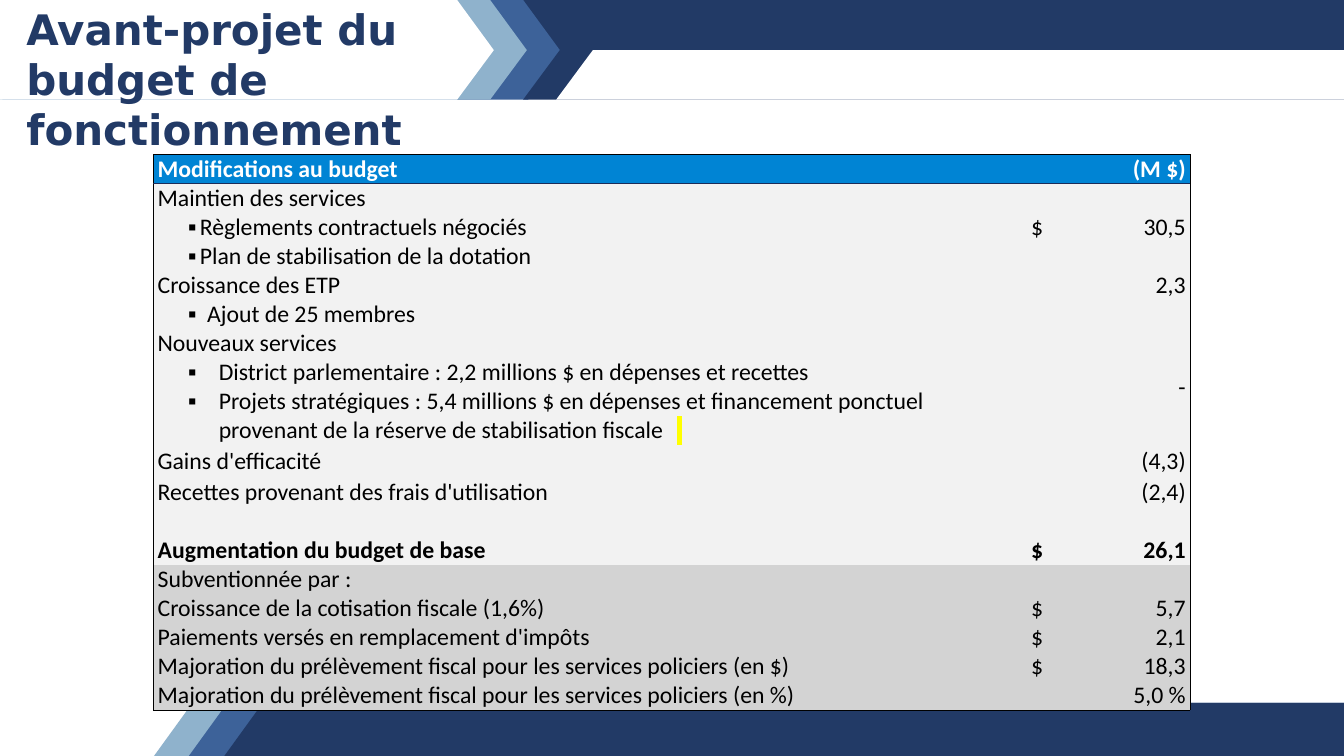
from dataclasses import dataclass
from typing import NamedTuple

import pptx
import pptx.dml.color
import pptx.enum.text
import pptx.oxml
import pptx.oxml.ns
import pptx.util
from pptx.util import Inches

ALIGN = pptx.enum.text.PP_ALIGN
ANCHOR = pptx.enum.text.MSO_ANCHOR
WIDTH, HEIGHT = 21.99, 12.37
LIGHT, MIDDLE, NAVY = "8FB2CC", "3D6299", "223A66"
BLACK, WHITE, HEADER_RULE = "000000", "FFFFFF", "1B2C59"
HEADER_FILL, CHANGE_FILL, FUNDING_FILL = "0084D4", "F2F2F2", "D3D3D3"
COLUMN_WIDTHS = (14.09, 0.74, 2.13)
LINE = 0.47
BAR, TIP, FOOTER = 0.82, 1.63, 11.5


class Band(NamedTuple):
    """A slanted strip: its top edge, its bottom edge and its colour."""
    top: float
    top_left: float
    top_right: float
    bottom: float
    bottom_left: float
    bottom_right: float
    color: str


BANDS = [
    Band(FOOTER, 3.15, WIDTH, HEIGHT, 2.52, WIDTH, LIGHT),
    Band(FOOTER, 3.72, WIDTH, HEIGHT, 3.09, WIDTH, MIDDLE),
    Band(FOOTER, 4.3, WIDTH, HEIGHT, 3.67, WIDTH, NAVY),
    Band(0, 5.22, WIDTH, BAR, 5.81, WIDTH, NAVY),
    Band(0, 0.04, 8.56, BAR, 0.04, 9.16, MIDDLE),
    Band(0, 0.04, 8.02, BAR, 0.04, 8.62, LIGHT),
    Band(0, 0, 7.48, BAR, 0, 8.08, WHITE),
    Band(BAR, 0.04, 9.23, TIP, 0.04, 8.64, MIDDLE),
    Band(BAR, 0, 8.62, TIP, 0, 8.02, LIGHT),
    Band(BAR, 0, 8.08, TIP, 0, 7.48, WHITE),
    Band(BAR, 9.16, WIDTH, TIP, 8.56, WIDTH, NAVY),
    Band(BAR, 9.7, WIDTH, TIP, 9.1, WIDTH, WHITE),
]


@dataclass
class BudgetRow:
    label: str = ""
    amount: str = ""
    dollar: str = ""
    bullets: tuple[str, ...] = ()
    indent: float = 0
    hanging: float = 0
    height: float = LINE
    fill: str = CHANGE_FILL
    color: str = BLACK
    bold: bool = False
    amount_anchor: ANCHOR = ANCHOR.MIDDLE
    amount_spacing: float = 1


ROWS = [
    BudgetRow("Modifications au budget", "(M $)", fill=HEADER_FILL, color=WHITE,
              bold=True, amount_anchor=ANCHOR.BOTTOM),
    BudgetRow("Maintien des services", "30,5", "$",
              ("Règlements contractuels négociés", "Plan de stabilisation de la dotation"),
              0.69, 0.19, height=1.4, amount_anchor=ANCHOR.TOP, amount_spacing=2),
    BudgetRow("Croissance des ETP", "2,3", "", ("Ajout de 25 membres",),
              0.81, 0.31, height=0.93, amount_anchor=ANCHOR.TOP),
    BudgetRow("Nouveaux services", "-", "",
              ("District parlementaire : 2,2 millions $ en dépenses et recettes",
               "Projets stratégiques : 5,4 millions $ en dépenses et financement ponctuel "
               "provenant de la réserve de stabilisation fiscale"),
              1, 0.5, height=1.9),
    BudgetRow("Gains d'efficacité", "(4,3)", height=0.53),
    BudgetRow("Recettes provenant des frais d'utilisation", "(2,4)"),
    BudgetRow(),
    BudgetRow("Augmentation du budget de base", "26,1", "$", bold=True),
    BudgetRow("Subventionnée par :", fill=FUNDING_FILL),
    BudgetRow("Croissance de la cotisation fiscale (1,6%)", "5,7", "$", fill=FUNDING_FILL),
    BudgetRow("Paiements versés en remplacement d'impôts", "2,1", "$", fill=FUNDING_FILL),
    BudgetRow("Majoration du prélèvement fiscal pour les services policiers (en $)",
              "18,3", "$", fill=FUNDING_FILL),
    BudgetRow("Majoration du prélèvement fiscal pour les services policiers (en %)",
              "5,0 %", fill=FUNDING_FILL),
]


def rgb(color: str) -> pptx.dml.color.RGBColor:
    return pptx.dml.color.RGBColor.from_string(color)


def xml(markup: str):
    """Parse one DrawingML element, adding the namespace to its tag."""
    tag, rest = markup.split(" ", 1)
    return pptx.oxml.parse_xml(f"{tag} {pptx.oxml.ns.nsdecls('a')} {rest}")


def draw_band(page, band: Band) -> None:
    builder = page.shapes.build_freeform(Inches(band.top_left), Inches(band.top))
    builder.add_line_segments([
        (Inches(band.top_right), Inches(band.top)),
        (Inches(band.bottom_right), Inches(band.bottom)),
        (Inches(band.bottom_left), Inches(band.bottom))])
    shape = builder.convert_to_shape()
    shape.shadow.inherit = False
    shape.fill.solid()
    shape.fill.fore_color.rgb = rgb(band.color)
    shape.line.fill.background()


def set_borders(cell, colors: dict[str, str]) -> None:
    """Draw the sides (L, R, T, B) that have a colour and clear the others."""
    properties = cell._tc.get_or_add_tcPr()
    for side in "LRTB":
        paint = "<a:noFill/>"
        if side in colors:
            paint = f'<a:solidFill><a:srgbClr val="{colors[side]}"/></a:solidFill>'
        properties.append(xml(f'<a:ln{side} w="12700">{paint}</a:ln{side}>'))


def add_bullet(para, indent: float, hanging: float) -> None:
    properties = para._p.get_or_add_pPr()
    properties.set("marL", str(Inches(indent)))
    properties.set("indent", str(-Inches(hanging)))
    properties.append(xml(f'<a:buClr ><a:srgbClr val="{BLACK}"/></a:buClr>'))
    properties.append(xml('<a:buFont typeface="Calibri"/>'))
    properties.append(xml('<a:buChar char="▪"/>'))


def set_font(para, name: str, size: float, color: str, bold: bool) -> None:
    para.font.name = name
    para.font.size = pptx.util.Pt(size)
    para.font.bold = bold
    para.font.color.rgb = rgb(color)


def fill_cell(cell, row: BudgetRow, column: int) -> None:
    cell.margin_left = cell.margin_right = Inches(0.07)
    cell.margin_top = cell.margin_bottom = 0
    cell.vertical_anchor = row.amount_anchor if column else ANCHOR.MIDDLE
    cell.fill.solid()
    cell.fill.fore_color.rgb = rgb(row.fill)
    lines = ((row.label, *row.bullets), (row.dollar,), (row.amount,))[column]
    cell.text_frame.text = "\n".join(lines)
    for index, para in enumerate(cell.text_frame.paragraphs):
        para.alignment = (ALIGN.LEFT, ALIGN.CENTER, ALIGN.RIGHT)[column]
        if column and row.amount_spacing != 1:
            para.line_spacing = float(row.amount_spacing)
        if index:
            add_bullet(para, row.indent, row.hanging)
        set_font(para, "Calibri", 28, row.color, row.bold)


def add_highlighted_tab(para) -> None:
    span = para.add_run()
    span.text = "\t "
    span.font._element.append(
        xml('<a:highlight ><a:srgbClr val="FFFF00"/></a:highlight>'))


def draw_budget_table(page) -> None:
    frame = page.shapes.add_table(
        len(ROWS), len(COLUMN_WIDTHS), Inches(2.51), Inches(2.53),
        Inches(sum(COLUMN_WIDTHS)), Inches(sum(row.height for row in ROWS)))
    table = frame.table
    table.first_row = table.horz_banding = False
    for column, width in enumerate(COLUMN_WIDTHS):
        table.columns[column].width = Inches(width)
    for index, row in enumerate(ROWS):
        table.rows[index].height = Inches(row.height)
        for column in range(len(COLUMN_WIDTHS)):
            borders = {}
            if column == 0:
                borders["L"] = BLACK
            if column == len(COLUMN_WIDTHS) - 1:
                borders["R"] = BLACK
            if index < 2:
                borders["T"] = HEADER_RULE if index else BLACK
            if index == 0:
                borders["B"] = HEADER_RULE
            if index == len(ROWS) - 1:
                borders["B"] = BLACK
            cell = table.cell(index, column)
            set_borders(cell, borders)
            fill_cell(cell, row, column)
    add_highlighted_tab(table.cell(3, 0).text_frame.paragraphs[-1])


def place_title(page) -> None:
    title = page.shapes.title
    title.left, title.top = Inches(0.33), 0
    title.width, title.height = Inches(8.6), Inches(1.09)
    # The placeholder comes first in the page, so it is raised above the bands.
    page.shapes._spTree.append(title._element)
    box = title.text_frame
    box.text = "Avant-projet du budget de fonctionnement"
    box.word_wrap = True
    box.auto_size = pptx.enum.text.MSO_AUTO_SIZE.NONE
    box.vertical_anchor = ANCHOR.TOP
    para = box.paragraphs[0]
    para.alignment = ALIGN.LEFT
    set_font(para, "DejaVu Sans", 49.5, NAVY, True)


def main() -> None:
    deck = pptx.Presentation()
    deck.slide_width, deck.slide_height = Inches(WIDTH), Inches(HEIGHT)
    page = deck.slides.add_slide(deck.slide_layouts[5])
    for band in BANDS:
        draw_band(page, band)
    draw_budget_table(page)
    place_title(page)
    deck.save("out.pptx")


if __name__ == "__main__":
    main()
